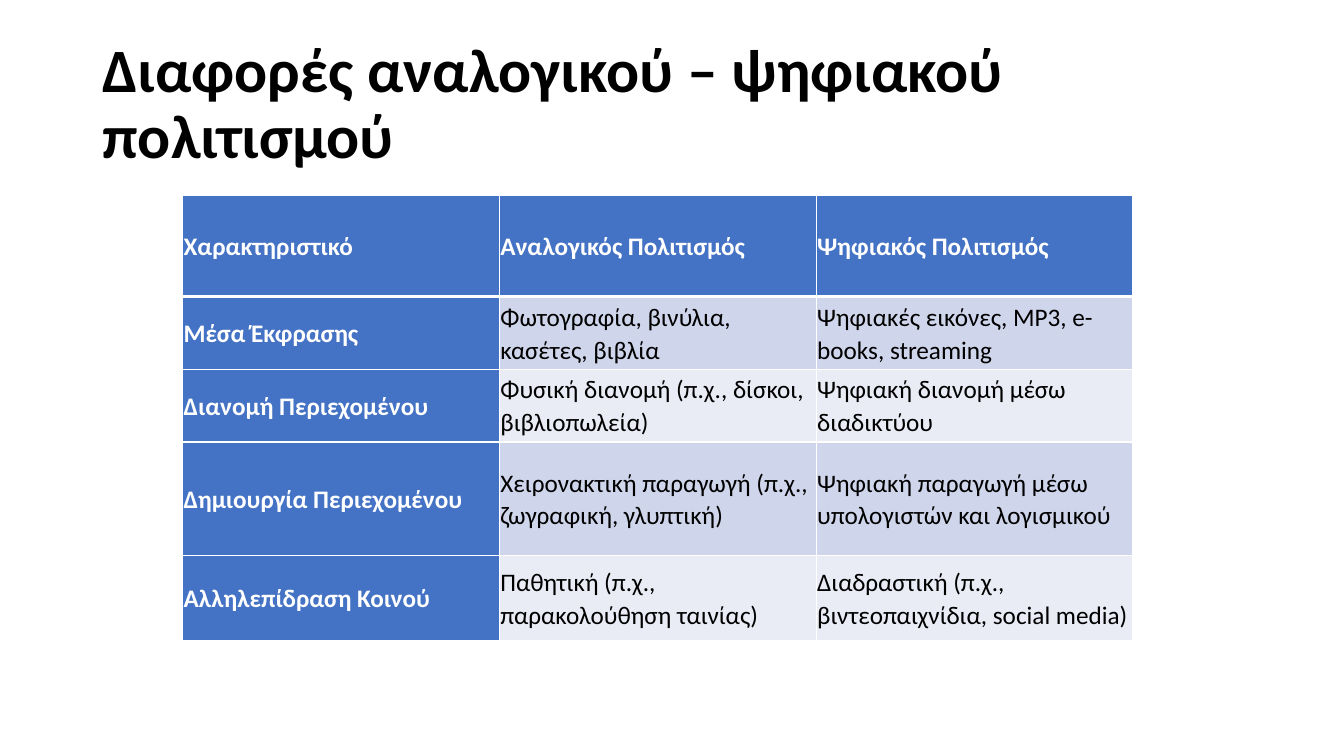
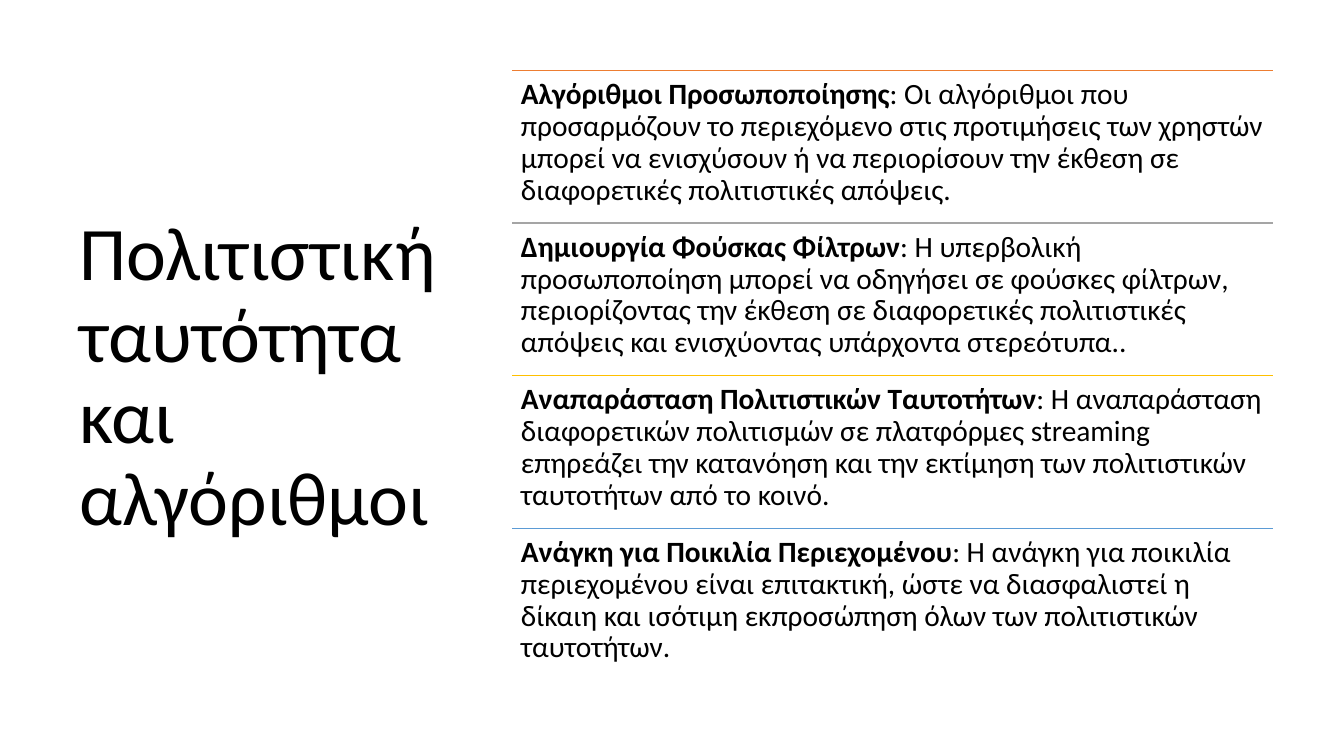
"""Build two slides on analogue and digital culture."""
from pptx import Presentation
from pptx.dml.color import RGBColor
from pptx.enum.shapes import MSO_CONNECTOR
from pptx.enum.text import MSO_ANCHOR
from pptx.oxml.ns import qn
from pptx.util import Pt
from lxml.etree import SubElement

FONT = "Calibri"
COLORS = {
    "text": "000000", "white": "FFFFFF", "header": "4472C4",
    "band_dark": "CFD5EA", "band_light": "E9EBF5",
    "orange": "ED7D31", "gray": "A5A5A5", "gold": "FFC000", "blue": "5B9BD5",
}
ROW_HEIGHTS = (72, 52, 52, 81, 61)
COLUMN_WIDTH = 226.3
COMPARISON = (
    ("Χαρακτηριστικό", "Αναλογικός Πολιτισμός", "Ψηφιακός Πολιτισμός"),
    ("Μέσα Έκφρασης", "Φωτογραφία, βινύλια, κασέτες, βιβλία",
     "Ψηφιακές εικόνες, MP3, e-books, streaming"),
    ("Διανομή Περιεχομένου", "Φυσική διανομή (π.χ., δίσκοι, βιβλιοπωλεία)",
     "Ψηφιακή διανομή μέσω διαδικτύου"),
    ("Δημιουργία Περιεχομένου", "Χειρονακτική παραγωγή (π.χ., ζωγραφική, γλυπτική)",
     "Ψηφιακή παραγωγή μέσω υπολογιστών και λογισμικού"),
    ("Αλληλεπίδραση Κοινού", "Παθητική (π.χ., παρακολούθηση ταινίας)",
     "Διαδραστική (π.χ., βιντεοπαιχνίδια, social media)"),
)
TOPICS = (
    ("orange", "Αλγόριθμοι Προσωποποίησης",
     ": Οι αλγόριθμοι που προσαρμόζουν το περιεχόμενο στις προτιμήσεις των χρηστών "
     "μπορεί να ενισχύσουν ή να περιορίσουν την έκθεση σε διαφορετικές πολιτιστικές απόψεις."),
    ("gray", "Δημιουργία Φούσκας Φίλτρων",
     ": Η υπερβολική προσωποποίηση μπορεί να οδηγήσει σε φούσκες φίλτρων, περιορίζοντας "
     "την έκθεση σε διαφορετικές πολιτιστικές απόψεις και ενισχύοντας υπάρχοντα στερεότυπα.."),
    ("gold", "Αναπαράσταση Πολιτιστικών Ταυτοτήτων",
     ": Η αναπαράσταση διαφορετικών πολιτισμών σε πλατφόρμες streaming επηρεάζει την "
     "κατανόηση και την εκτίμηση των πολιτιστικών ταυτοτήτων από το κοινό."),
    ("blue", "Ανάγκη για Ποικιλία Περιεχομένου",
     ": Η ανάγκη για ποικιλία περιεχομένου είναι επιτακτική, ώστε να διασφαλιστεί η "
     "δίκαιη και ισότιμη εκπροσώπηση όλων των πολιτιστικών ταυτοτήτων."),
)
TOPIC_LEFT, TOPIC_TOP, TOPIC_WIDTH, TOPIC_HEIGHT = 365.8, 50.4, 543.6, 109


def color(name):
    return RGBColor.from_string(COLORS[name])


def style_paragraph(paragraph, size, spacing, ink="text", bold=None):
    paragraph.line_spacing = spacing
    paragraph.font.name = FONT
    paragraph.font.size = Pt(size)
    paragraph.font.color.rgb = color(ink)
    paragraph.font.bold = bold


def set_margins(holder, margin):
    holder.margin_left = holder.margin_right = Pt(margin)
    holder.margin_top = holder.margin_bottom = Pt(margin)


def add_text_frame(slide, left, top, width, height):
    frame = slide.shapes.add_textbox(Pt(left), Pt(top), Pt(width), Pt(height)).text_frame
    frame.word_wrap = True
    return frame


def add_title(slide, title, box, size, bold=False):
    frame = add_text_frame(slide, *box)
    frame.vertical_anchor = MSO_ANCHOR.MIDDLE
    frame.text = title
    style_paragraph(frame.paragraphs[0], size, 0.9, bold=bold)


def set_borders(cell, **widths):
    properties = cell._tc.get_or_add_tcPr()
    for side in "LRTB":
        border = SubElement(properties, qn(f"a:ln{side}"), w=str(Pt(widths.get(side, 1))))
        fill = SubElement(border, qn("a:solidFill"))
        SubElement(fill, qn("a:srgbClr"), val=COLORS["white"])


def fill_cell(cell, wording, row, column):
    heading = row == 0 or column == 0
    band = "band_dark" if row % 2 else "band_light"
    set_borders(cell, T=3 if row == 1 else 1, B=3 if row == 0 else 1)
    cell.fill.solid()
    cell.fill.fore_color.rgb = color("header" if heading else band)
    cell.vertical_anchor = MSO_ANCHOR.MIDDLE
    set_margins(cell, 0.75)
    cell.text = wording
    paragraph = cell.text_frame.paragraphs[0]
    style_paragraph(paragraph, 18, 1.07, "white" if heading else "text", heading)
    paragraph.space_after = Pt(8)


def add_comparison(slide, left, top):
    columns = len(COMPARISON[0])
    table = slide.shapes.add_table(
        len(COMPARISON), columns, Pt(left), Pt(top),
        Pt(COLUMN_WIDTH * columns), Pt(sum(ROW_HEIGHTS))).table
    for column in table.columns:
        column.width = Pt(COLUMN_WIDTH)
    for row, (height, wordings) in enumerate(zip(ROW_HEIGHTS, COMPARISON)):
        table.rows[row].height = Pt(height)
        for column, wording in enumerate(wordings):
            fill_cell(table.cell(row, column), wording, row, column)


def add_rule(slide, top, ink):
    rule = slide.shapes.add_connector(
        MSO_CONNECTOR.STRAIGHT, Pt(TOPIC_LEFT), Pt(top),
        Pt(TOPIC_LEFT + TOPIC_WIDTH), Pt(top))
    rule.line.color.rgb = color(ink)
    rule.line.width = Pt(1)
    SubElement(rule._element.spPr, qn("a:effectLst"))


def add_topic(slide, top, ink, term, explanation):
    add_rule(slide, top, ink)
    frame = add_text_frame(slide, TOPIC_LEFT, top, TOPIC_WIDTH, TOPIC_HEIGHT)
    set_margins(frame, 6.3)
    paragraph = frame.paragraphs[0]
    style_paragraph(paragraph, 21, 0.9)
    for wording, bold in ((term, True), (explanation, False)):
        run = paragraph.add_run()
        run.text = wording
        run.font.bold = bold


def main():
    deck = Presentation()
    deck.slide_width, deck.slide_height = Pt(960), Pt(540)
    blank = deck.slide_layouts[6]

    differences = deck.slides.add_slide(blank)
    add_title(differences, "Διαφορές αναλογικού – ψηφιακού πολιτισμού",
              (66, 28.8, 828, 93), 44, bold=True)
    add_comparison(differences, 130.4, 139.8)

    identity = deck.slides.add_slide(blank)
    add_title(identity, "Πολιτιστική ταυτότητα και αλγόριθμοι",
              (49.7, 50.4, 269.3, 440), 54)
    for index, topic in enumerate(TOPICS):
        add_topic(identity, TOPIC_TOP + index * TOPIC_HEIGHT, *topic)

    deck.save("out.pptx")


if __name__ == "__main__":
    main()
